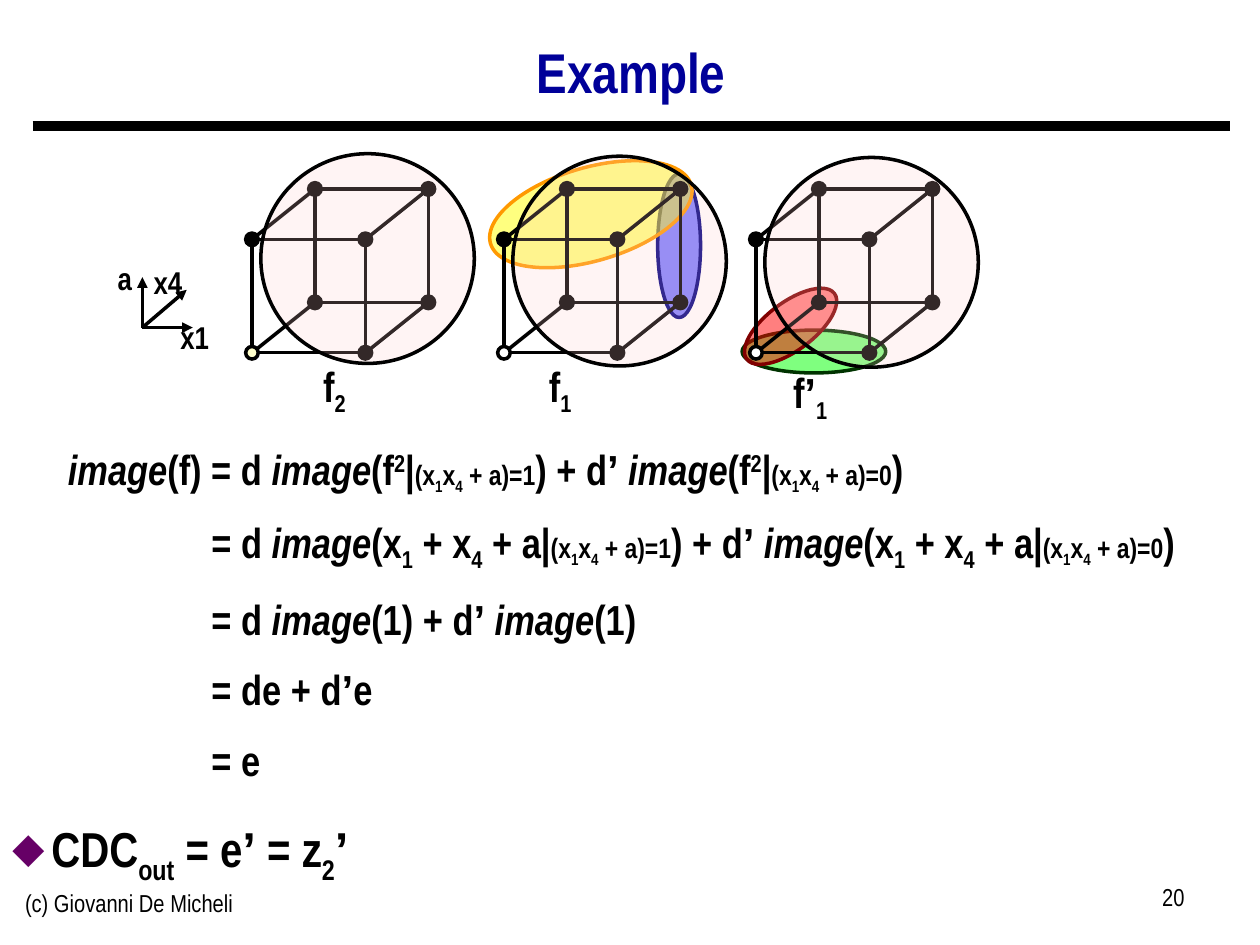
from lxml import etree
from pptx import Presentation
from pptx.dml.color import RGBColor
from pptx.enum.shapes import MSO_CONNECTOR, MSO_SHAPE
from pptx.enum.text import MSO_ANCHOR, PP_ALIGN
from pptx.oxml.ns import qn
from pptx.util import Inches, Pt

OVAL, RECT = MSO_SHAPE.OVAL, MSO_SHAPE.RECTANGLE
LINE = MSO_CONNECTOR.STRAIGHT
LEFT, MID, RIGHT = PP_ALIGN.LEFT, PP_ALIGN.CENTER, PP_ALIGN.RIGHT
TOP, CENTER = MSO_ANCHOR.TOP, MSO_ANCHOR.MIDDLE

HUE = dict(ink="000000", title="000099", mark="660066", white="FFFFFF",
           cream="FFFFCC", pink="FFCCCC", blue="0000FF", navy="000080",
           yellow="FFFF00", orange="FF9900", green="00FF00",
           forest="003300", red="FF0000", maroon="800000")

# The slide is a grid of 100 columns by 75 rows
COLS, ROWS = 100, 75
deck = Presentation()
deck.slide_width, deck.slide_height = Inches(10), Inches(7.5)
UNIT = deck.slide_width // COLS
page = deck.slides.add_slide(deck.slide_layouts[6])


def grid(*nums):
    return [round(n * UNIT) for n in nums]


def rgb(name):
    return RGBColor.from_string(HUE[name])


def sub(node, tag, **attrs):
    return etree.SubElement(node, qn(tag), **attrs)


def shape(kind, box, fill=None, edge="ink", alpha=None, turn=0):
    item = page.shapes.add_shape(kind, *grid(*box))
    item.shadow.inherit = False
    item.rotation = turn
    item.line.color.rgb = rgb(edge)
    item.line.width = Pt(2)
    if fill:
        item.fill.solid()
        item.fill.fore_color.rgb = rgb(fill)
    else:
        item.fill.background()
    if alpha:
        tint = item._element.spPr.find(qn("a:solidFill"))[0]
        sub(tint, "a:alpha", val=str(alpha * 1000))


def line(start, end, width=2, arrow=False):
    item = page.shapes.add_connector(LINE, *grid(*start, *end))
    item.line.color.rgb = rgb("ink")
    item.line.width = Pt(width)
    if arrow:
        sub(item.line._get_or_add_ln(), "a:tailEnd", type="triangle")
    sub(item._element.spPr, "a:effectLst")


def frame(box, wrap=True, anchor=TOP):
    body = page.shapes.add_textbox(*grid(*box)).text_frame
    body.word_wrap = wrap
    body.vertical_anchor = anchor
    return body


def write(para, text, size=24, color="ink", bold=True, align=LEFT):
    """Fill a paragraph with a string or with (string, marks) pairs.

    Marks: i italic, s small, _ subscript, ^ superscript.
    """
    para.alignment = align
    for part in [(text, "")] if isinstance(text, str) else text:
        words, marks = part
        run = para.add_run()
        run.text = words
        font = run.font
        font.name = "Arial" if "’" in words else "Arial Narrow"
        font.size = Pt(16 if "s" in marks else size)
        font.bold, font.italic = bold, "i" in marks
        font.color.rgb = rgb(color)
        if "_" in marks or "^" in marks:
            shift = "-25000" if "_" in marks else "30000"
            run._r.get_or_add_rPr().set("baseline", shift)


def indent(para, left, first):
    props = para._p.get_or_add_pPr()
    props.set("marL", str(Inches(left)))
    props.set("indent", str(Inches(first)))
    return props


def header(box):
    x, y, w, h = box
    line((x, y + h), (x + w, y + h), width=6)
    para = frame((x, y, w, h - 0.3), anchor=CENTER).paragraphs[0]
    para.line_spacing = 0.9
    write(para, "Example", size=32, color="title", align=MID)


def footer(box):
    x, y, w, h = box
    write(frame((x, y + 0.5, w / 3, h)).paragraphs[0],
          "(c) Giovanni De Micheli", size=14, bold=False)
    write(frame((x + w * 0.75, y, w / 4, h)).paragraphs[0],
          "20", size=14, bold=False, align=RIGHT)


def axes(box):
    x, y, w, h = box
    root = x, y + h
    for tip in ((x + w, y + h), (x, y), (x + w * 0.88, y + h / 4)):
        line(root, tip, arrow=True)
    for name, dx, dy, wide in (("x1", 0.5, 0.68, 4.3),
                               ("x4", -0.03, -0.4, 4.3),
                               ("a", -0.75, -0.48, 3.2)):
        spot = (x + dx * w, y + dy * h, wide, 4)
        write(frame(spot, wrap=False).paragraphs[0], name, size=18, align=MID)


def cube(box, corner):
    x, y, w, h = box
    wide, tall = w * 9 / 14, h * 9 / 13
    dx, dy = w - wide, h - tall
    shape(RECT, (x, y + dy, wide, tall))
    shape(RECT, (x + dx, y, wide, tall))
    front = [(x + i * wide, y + dy + j * tall) for j in (0, 1) for i in (0, 1)]
    back = [(px + dx, py - dy) for px, py in front]
    for near, far in zip(front, back):
        line(near, far)
    for px, py in front + back:
        fill = corner if (px, py) == front[2] else "ink"
        shape(OVAL, (px - 0.5, py - 0.5, 1, 1), fill)


def cover(box, lift):
    x, y, w, h = box
    shape(OVAL, (x + w * 0.05, y - lift, w * 1.21, h * 1.28), "pink", alpha=20)


def proof(box):
    given = [[("(x", "s"), ("1", "s_"), ("x", "s"), ("4", "s_"),
              (f" + a)={bit}", "s")] for bit in (1, 0)]

    def images(arg):
        ask = [("image", "i"), ("(", ""), *arg, ("|", "")]
        return [*ask, *given[0], (") + d", ""), ("’ ", ""),
                *ask, *given[1], (")", "")]

    total = [("x", ""), ("1", "_"), (" + x", ""), ("4", "_"), (" + a", "")]
    steps = [
        [("image", "i"), ("(f) = d ", ""), *images([("f", ""), ("2", "^")])],
        [("= d ", ""), *images(total)],
        [("= d ", ""), ("image", "i"), ("(1) + d", ""), ("’ ", ""),
         ("image", "i"), ("(1)", "")],
        [("= de + d", ""), ("’", ""), ("e", "")],
        "= e",
    ]
    body = frame(box)
    for row, step in enumerate(steps):
        para = body.add_paragraph() if row else body.paragraphs[0]
        indent(para, 1.58 if row else 0.69, 0 if row else -0.25)
        para.line_spacing = 1.1
        para.space_before = Pt(8.5 if row else 0)
        write(para, step)

    # Bulleted conclusion
    para = body.add_paragraph()
    para.line_spacing, para.space_before = 1.25, Pt(10)
    props = indent(para, 0.31, -0.31)
    sub(sub(props, "a:buClr"), "a:srgbClr", val=HUE["mark"])
    sub(props, "a:buSzPct", val="85000")
    sub(props, "a:buChar", char="◆")
    write(para, [("CDC", ""), ("out", "_"), (" = e", ""), ("’", ""),
                 (" = z", ""), ("2", "_"), ("’", "")], size=28)


header((2.6, 2.2, 95, 7.8))
footer((1, 69.5, 94, 5.2))
proof((0, 34.3, 97.6, 37))

# Highlighted vertex groups, behind the cubes
for spot, fill, edge, turn in (
        ((52.2, 13.8, 3.4, 11.4), "blue", "navy", 0),
        ((38.6, 13.3, 16.6, 7.4), "yellow", "orange", 343.7),
        ((58.9, 26.2, 11.4, 3.4), "green", "forest", 0),
        ((58.4, 24, 8.7, 3.8), "red", "maroon", 323.1)):
    shape(OVAL, spot, fill, edge, alpha=50, turn=turn)

axes((11.3, 22, 4, 4))

# Cubes, their names, then the covering circles
boxes = [(20 * n, 15, 14, 13) for n in (1, 2, 3)]
for box, corner in zip(boxes, ("cream", "white", "white")):
    cube(box, corner)
for spot, name in (
        ((24.6, 28.1, 3.9, 5), [("f", ""), ("2", "_")]),
        ((42.5, 28.1, 3.9, 5), [("f", ""), ("1", "_")]),
        ((59.5, 28.6, 9.6, 5), [("f", ""), ("’", ""), ("1", "_")])):
    write(frame(spot, wrap=False).paragraphs[0], name, align=MID)
for box, lift in zip(boxes, (2.8, 2.6, 2.5)):
    cover(box, lift)

deck.save("out.pptx")
